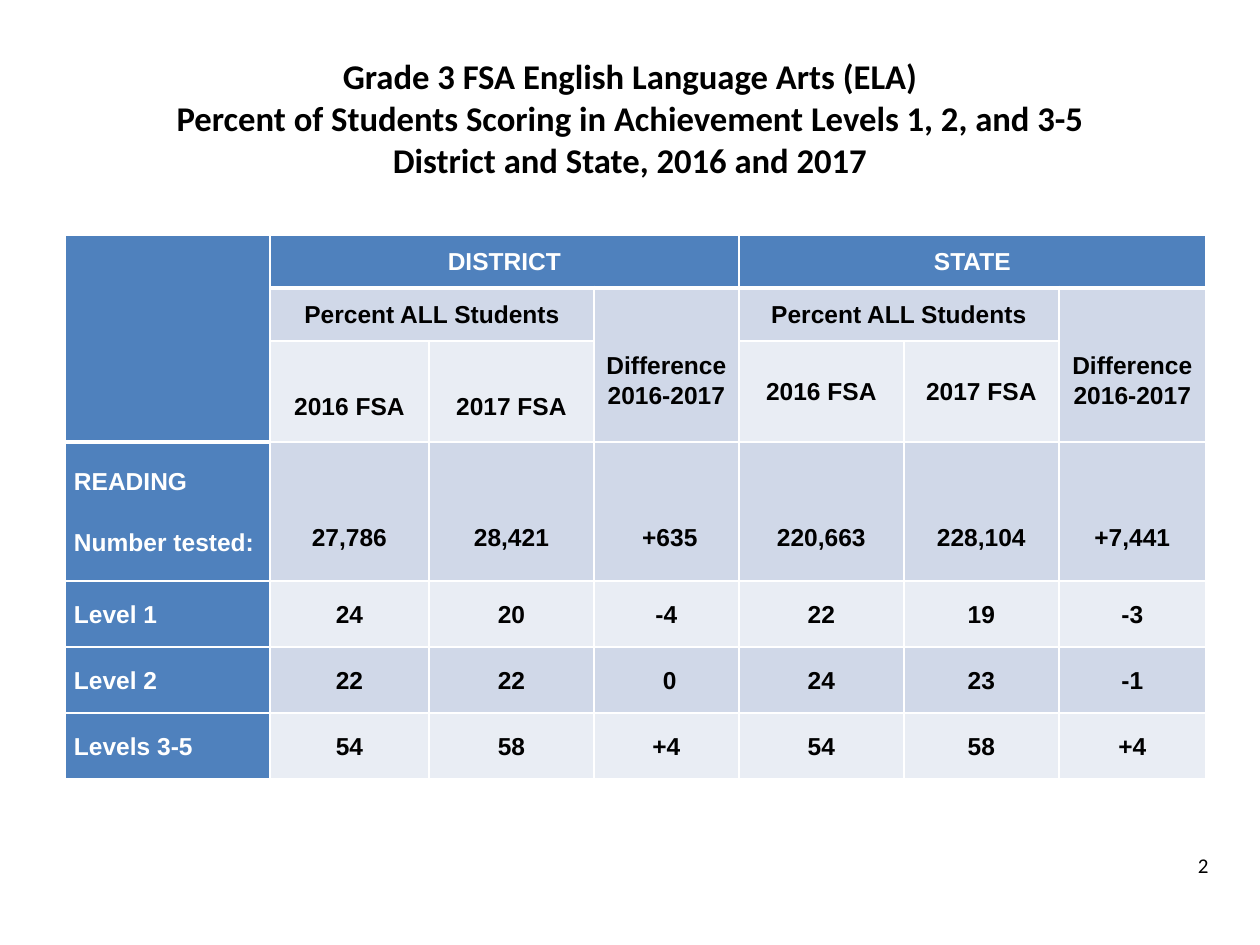
import copy

import pptx
import pptx.dml.color
import pptx.enum.text
import pptx.oxml
import pptx.oxml.ns
import pptx.util

PX = 914400 // 126
HUES = {"head": "4F81BD", "dark": "D0D8E8", "light": "E9EDF4",
        "white": "FFFFFF", "black": "000000"}
ALIGN = pptx.enum.text.PP_ALIGN
ANCHOR = pptx.enum.text.MSO_ANCHOR

TITLE = ("Grade 3 FSA English Language Arts (ELA)\n"
         "Percent of Students Scoring in Achievement Levels 1, 2, and 3-5\n"
         "District and State, 2016 and 2017")
PAGE = "2"
DIFF = "Difference 2016-2017"
ALL = "Percent ALL Students"
ROWS = [
    ["", "DISTRICT", "", "", "STATE", "", ""],
    ["", ALL, "", DIFF, ALL, "", DIFF],
    ["", "2016 FSA", "2017 FSA", "", "2016 FSA", "2017 FSA", ""],
    ["READING\nNumber tested:", "27,786", "28,421", " +635",
     "220,663", "228,104", "+7,441"],
    ["Level 1", "24", "20", "-4", "22", "19", "-3"],
    ["Level 2", "22", "22", " 0", "24", "23", "-1"],
    ["Levels 3-5", "54", "58", "+4", "54", "58", "+4"],
]
WIDTHS = [205, 159, 165, 145, 165, 155, 147]
HEIGHTS = [53, 53, 101, 139, 66, 66, 66]
MERGES = [((0, 0), (2, 0)), ((0, 1), (0, 3)), ((0, 4), (0, 6)),
          ((1, 1), (1, 2)), ((1, 3), (2, 3)),
          ((1, 4), (1, 5)), ((1, 6), (2, 6))]
LOWERED = [(1, 3), (1, 6), (2, 1), (2, 2)]
TESTED = 3  # row with the number tested
LINE = 30   # height of one line of cell text


def px(*nums):
    return [pptx.util.Emu(n * PX) for n in nums]


def rgb(name):
    return pptx.dml.color.RGBColor.from_string(HUES[name])


def style(para, face, size, hue, bold, align):
    para.alignment = align
    for run in para.runs:
        run.font.name = face
        run.font.size = pptx.util.Pt(size)
        run.font.bold = bold
        run.font.color.rgb = rgb(hue)


def edge(cell, row, col):
    """Draw white borders, thick below the header cells."""
    wide = {"T": (row == 1 and col > 0) or (row == 3 and col == 0),
            "B": row == 0 or (row == 2 and col == 0)}
    props = cell._tc.get_or_add_tcPr()
    for i, side in enumerate("LRTB"):
        width = pptx.util.Pt(3 if wide.get(side) else 1)
        props.insert(i, pptx.oxml.parse_xml(
            f'<a:ln{side} {pptx.oxml.ns.nsdecls("a")} w="{width}"><a:solidFill>'
            f'<a:srgbClr val="{HUES["white"]}"/></a:solidFill></a:ln{side}>'))


def fill_cell(cell, row, col):
    head = row == 0 or col == 0
    cell.fill.solid()
    cell.fill.fore_color.rgb = rgb("head" if head else
                                   "dark" if row % 2 else "light")
    edge(cell, row, col)
    tested = row == TESTED and col > 0
    cell.vertical_anchor = ANCHOR.BOTTOM if tested else ANCHOR.MIDDLE
    cell.margin_left, cell.margin_right = px(9, 9)
    cell.margin_top, cell.margin_bottom = px(
        LINE if (row, col) in LOWERED else 0, LINE - 1 if tested else 0)
    cell.text_frame.text = ROWS[row][col]
    for i, para in enumerate(cell.text_frame.paragraphs):
        para.line_spacing = 1.07
        para.space_before = pptx.util.Pt(18 if i else 0)
        style(para, "Arial", 14, "white" if head else "black", True,
              ALIGN.CENTER if col else ALIGN.LEFT)


def add_title(slide):
    title = slide.shapes.title
    title.left, title.top, title.width, title.height = px(63, 38, 1134, 207)
    frame = title.text_frame
    frame.auto_size = pptx.enum.text.MSO_AUTO_SIZE.NONE
    frame.vertical_anchor = ANCHOR.MIDDLE
    frame.margin_bottom = px(54)[0]
    para = frame.paragraphs[0]
    para.text = TITLE
    style(para, "Calibri", 19.8, "black", True, ALIGN.CENTER)
    for gap in para._p.findall(pptx.oxml.ns.qn("a:br")):
        gap.append(copy.deepcopy(para.runs[0].font._rPr))


def add_scores(slide):
    table = slide.shapes.add_table(
        len(ROWS), len(WIDTHS),
        *px(65, 235, sum(WIDTHS), sum(HEIGHTS))).table
    table.first_row = table.horz_banding = False
    for col, width in zip(table.columns, px(*WIDTHS)):
        col.width = width
    for row, height in zip(table.rows, px(*HEIGHTS)):
        row.height = height
    for first, last in MERGES:
        table.cell(*first).merge(table.cell(*last))
    for row in range(len(ROWS)):
        for col in range(len(WIDTHS)):
            fill_cell(table.cell(row, col), row, col)


def add_page(slide):
    frame = slide.shapes.add_textbox(*px(927, 820, 294, 90)).text_frame
    frame.word_wrap = True
    frame.vertical_anchor = ANCHOR.MIDDLE
    frame.text = PAGE
    style(frame.paragraphs[0], "Calibri", 12, "black", False, ALIGN.RIGHT)


def main():
    deck = pptx.Presentation()
    deck.slide_width, deck.slide_height = px(1260, 945)
    slide = deck.slides.add_slide(deck.slide_layouts[5])
    add_title(slide)
    add_scores(slide)
    add_page(slide)
    deck.save("out.pptx")


if __name__ == "__main__":
    main()
